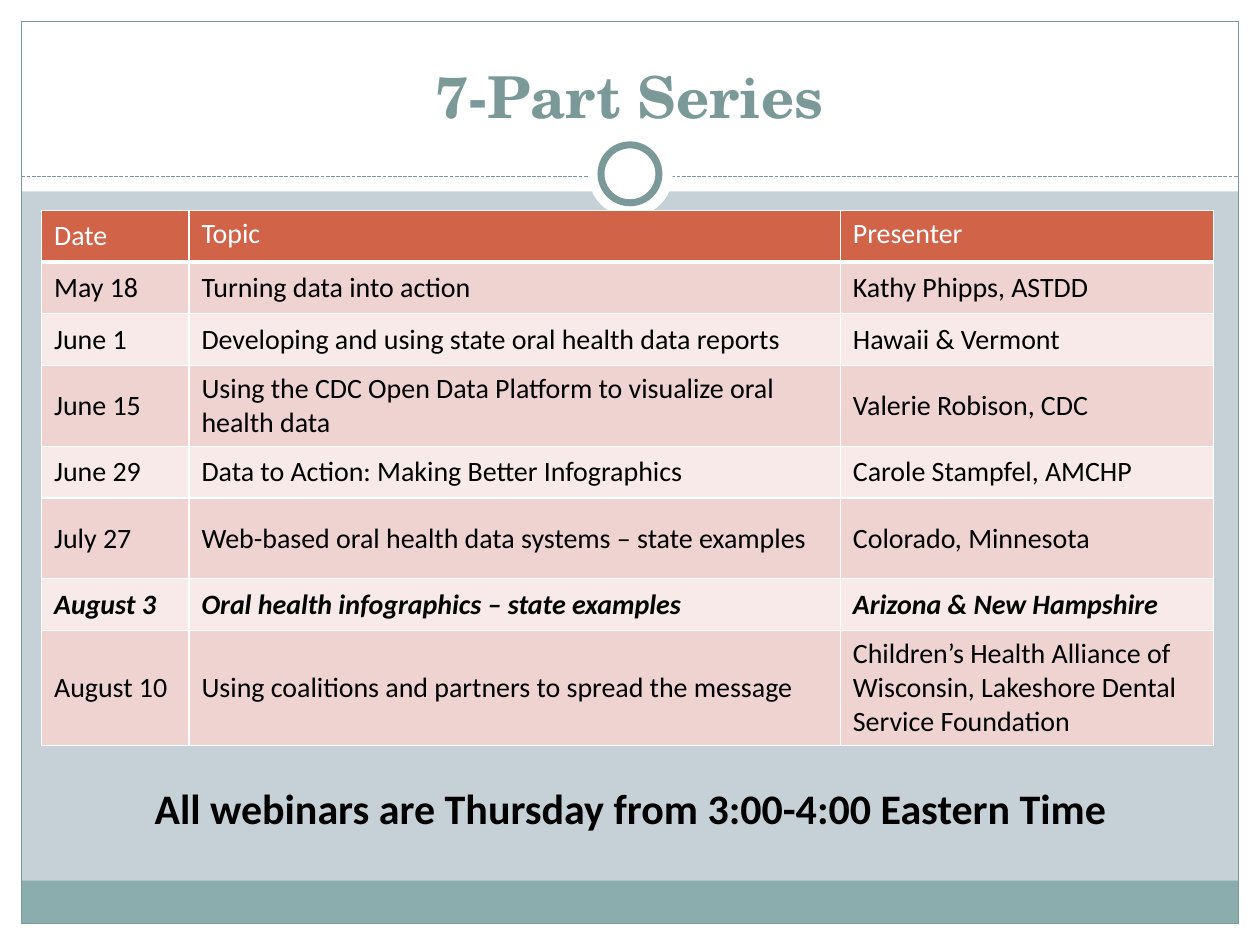
from dataclasses import dataclass

from lxml.etree import SubElement
from pptx import Presentation
from pptx.dml.color import RGBColor
from pptx.enum.dml import MSO_LINE_DASH_STYLE as Dash
from pptx.enum.shapes import MSO_CONNECTOR as Connector
from pptx.enum.shapes import MSO_SHAPE as Shape
from pptx.enum.text import MSO_ANCHOR as Anchor
from pptx.enum.text import MSO_AUTO_SIZE as AutoSize
from pptx.enum.text import PP_ALIGN as Align
from pptx.oxml.ns import qn
from pptx.util import Inches, Pt


@dataclass(frozen=True)
class Theme:
    background: str = "C5D1D7"
    white: str = "FFFFFF"
    black: str = "000000"
    accent: str = "7C999A"
    footer: str = "8CADAE"
    header: str = "D16349"
    odd_row: str = "EED3D0"
    even_row: str = "F7EAE9"
    title_font: str = "TeX Gyre Schola"
    body_font: str = "Calibri"
    title_size: int = 33
    table_size: int = 16
    note_size: int = 24


THEME = Theme()
WIDTH, HEIGHT, MARGIN = 10, 7.5, 0.17
HIGHLIGHTED_DATE = "August 3"
COLUMN_WIDTHS = [1.17, 5.17, 2.96]
ROW_HEIGHTS = [0.41, 0.41, 0.41, 0.64, 0.41, 0.64, 0.41, 0.91]
SCHEDULE = [
    ("Date", "Topic", "Presenter"),
    ("May 18", "Turning data into action", "Kathy Phipps, ASTDD"),
    ("June 1", "Developing and using state oral health data reports", "Hawaii & Vermont"),
    ("June 15", "Using the CDC Open Data Platform to visualize oral health data",
     "Valerie Robison, CDC"),
    ("June 29", "Data to Action: Making Better Infographics", "Carole Stampfel, AMCHP"),
    ("July 27", "Web-based oral health data systems – state examples", "Colorado, Minnesota"),
    ("August 3", "Oral health infographics – state examples", "Arizona & New Hampshire"),
    ("August 10", "Using coalitions and partners to spread the message",
     "Children’s Health Alliance of Wisconsin, Lakeshore Dental Service Foundation"),
]


def color(value):
    return RGBColor.from_string(value)


def write_text(frame, text, *, size, ink, font=THEME.body_font, bold=False,
               italic=False, align=Align.LEFT):
    para = frame.paragraphs[0]
    para.alignment = align
    span = para.add_run()
    span.text = text
    span.font.name = font
    span.font.size = Pt(size)
    span.font.bold = bold
    span.font.italic = italic
    span.font.color.rgb = color(ink)


def add_panel(page, kind, left, top, width, height, fill=None, line=None, weight=0.75):
    panel = page.shapes.add_shape(kind, Inches(left), Inches(top), Inches(width), Inches(height))
    panel.shadow.inherit = False
    if fill:
        panel.fill.solid()
        panel.fill.fore_color.rgb = color(fill)
    else:
        panel.fill.background()
    if line:
        panel.line.color.rgb = color(line)
        panel.line.width = Pt(weight)
    else:
        panel.line.fill.background()


def add_dashed_rule(page, left, right, top):
    rule = page.shapes.add_connector(
        Connector.STRAIGHT, Inches(left), Inches(top), Inches(right), Inches(top))
    rule.line.color.rgb = color(THEME.accent)
    rule.line.width = Pt(0.75)
    rule.line.dash_style = Dash.SQUARE_DOT
    SubElement(rule._element.spPr, qn("a:effectLst"))


def add_text_box(page, left, top, width, height, text, *, anchor=Anchor.TOP,
                 wrap=True, fit=AutoSize.NONE, **style):
    box = page.shapes.add_textbox(Inches(left), Inches(top), Inches(width), Inches(height))
    frame = box.text_frame
    frame.word_wrap = wrap
    frame.auto_size = fit
    frame.vertical_anchor = anchor
    write_text(frame, text, align=Align.CENTER, **style)


def add_borders(cell, bottom):
    properties = cell._tc.get_or_add_tcPr()
    for side, weight in zip("LRTB", (1, 1, 1, bottom)):
        border = SubElement(properties, qn(f"a:ln{side}"), w=str(Pt(weight)))
        fill = SubElement(border, qn("a:solidFill"))
        SubElement(fill, qn("a:srgbClr"), val=THEME.white)


def fill_cell(cell, text, *, fill, anchor, bottom, **style):
    add_borders(cell, bottom)
    cell.fill.solid()
    cell.fill.fore_color.rgb = color(fill)
    cell.vertical_anchor = anchor
    write_text(cell.text_frame, text, size=THEME.table_size, **style)


def add_schedule(page, left, top):
    table = page.shapes.add_table(
        len(SCHEDULE), len(COLUMN_WIDTHS), Inches(left), Inches(top),
        Inches(sum(COLUMN_WIDTHS)), Inches(sum(ROW_HEIGHTS))).table
    table.horz_banding = False
    for column, width in zip(table.columns, COLUMN_WIDTHS):
        column.width = Inches(width)
    for number, (row, height, texts) in enumerate(zip(table.rows, ROW_HEIGHTS, SCHEDULE)):
        row.height = Inches(height)
        is_header = number == 0
        band = THEME.odd_row if number % 2 else THEME.even_row
        highlighted = texts[0] == HIGHLIGHTED_DATE
        for index, (cell, text) in enumerate(zip(row.cells, texts)):
            fill_cell(cell, text,
                      fill=THEME.header if is_header else band,
                      anchor=Anchor.TOP if is_header and index else Anchor.MIDDLE,
                      bottom=3 if is_header else 1,
                      ink=THEME.white if is_header else THEME.black,
                      bold=highlighted, italic=highlighted)


def add_backdrop(page):
    page.background.fill.solid()
    page.background.fill.fore_color.rgb = color(THEME.background)
    inner_width = WIDTH - 2 * MARGIN
    inner_height = HEIGHT - 2 * MARGIN
    for bounds in [(0, HEIGHT - MARGIN, WIDTH, MARGIN), (0, 0, WIDTH, 1.52),
                   (0, 0, MARGIN, HEIGHT), (WIDTH - MARGIN, 0, MARGIN, HEIGHT)]:
        add_panel(page, Shape.RECTANGLE, *bounds, fill=THEME.white)
    add_panel(page, Shape.RECTANGLE, MARGIN, 6.99, inner_width, 0.34, fill=THEME.footer)
    add_panel(page, Shape.RECTANGLE, MARGIN, MARGIN, inner_width, inner_height, line=THEME.accent)
    add_dashed_rule(page, MARGIN, WIDTH - MARGIN, 1.4)
    add_panel(page, Shape.OVAL, 4.67, 1.05, 0.67, 0.67, fill=THEME.white)
    add_panel(page, Shape.OVAL, 4.77, 1.15, 0.46, 0.46,
              fill=THEME.white, line=THEME.accent, weight=4)


def main():
    deck = Presentation()
    deck.slide_width = Inches(WIDTH)
    deck.slide_height = Inches(HEIGHT)
    page = deck.slides.add_slide(deck.slide_layouts[6])
    add_backdrop(page)
    add_text_box(page, 0.33, 0.25, 9.33, 0.83, "7-Part Series", anchor=Anchor.BOTTOM,
                 size=THEME.title_size, font=THEME.title_font, ink=THEME.accent, bold=True)
    add_schedule(page, 0.33, 1.67)
    add_text_box(page, 1.09, 6.16, 7.83, 0.5,
                 "All webinars are Thursday from 3:00-4:00 Eastern Time",
                 wrap=False, fit=AutoSize.SHAPE_TO_FIT_TEXT,
                 size=THEME.note_size, ink=THEME.black, bold=True)
    deck.save("out.pptx")


if __name__ == "__main__":
    main()
